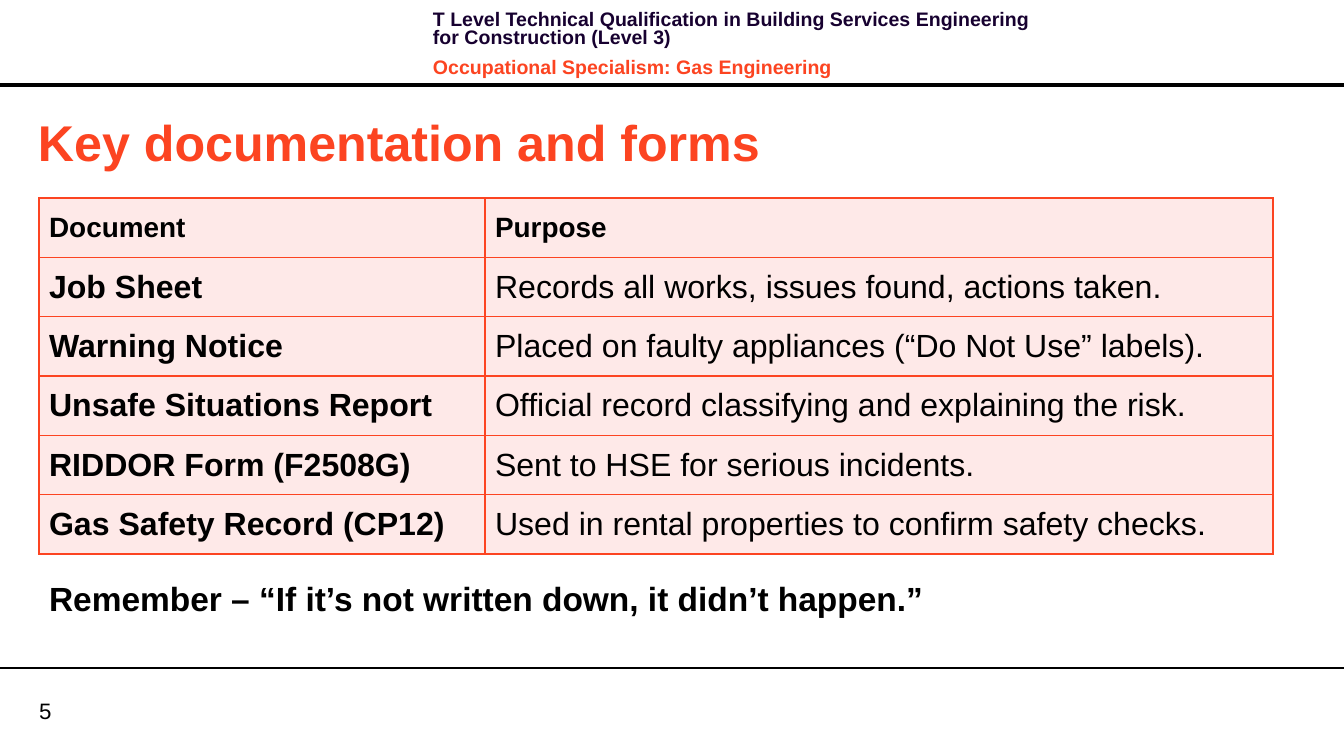
"""Build the slide on key documentation and forms for gas engineering."""
from dataclasses import dataclass

from lxml.etree import SubElement
from pptx import Presentation
from pptx.dml.color import RGBColor
from pptx.enum.shapes import MSO_CONNECTOR, MSO_SHAPE
from pptx.enum.text import MSO_ANCHOR
from pptx.oxml.ns import qn
from pptx.slide import Slide
from pptx.table import _Cell
from pptx.text.text import _Paragraph
from pptx.util import Emu, Pt

EMU_PER_PX = 9108
SLIDE_WIDTH, SLIDE_HEIGHT = 1344, 751
BLACK, NAVY, ORANGE, BLUSH = "000000", "170130", "FC4421", "FEE9E8"
TABLE_LEFT, TABLE_TOP, TABLE_HEIGHT = 39, 198, 356
COLUMN_WIDTHS = (446, 788)


@dataclass(frozen=True)
class Line:
    text: str
    size: int
    color: str = BLACK
    bold: bool = True


@dataclass(frozen=True)
class TextBlock:
    left: int
    top: int
    width: int
    height: int
    lines: tuple[Line, ...]
    anchor: MSO_ANCHOR = MSO_ANCHOR.TOP
    margin_x: int = 10
    margin_y: int = 5
    line_points: float | None = None
    gap_points: int = 0


@dataclass(frozen=True)
class Document:
    name: str
    purpose: str


TEXT_BLOCKS = (
    TextBlock(39, 697, 64, 27, (Line("5", 16, bold=False),), MSO_ANCHOR.MIDDLE, 0, 0),
    TextBlock(
        423, 7, 640, 64,
        (
            Line("T Level Technical Qualification in Building Services Engineering "
                 "for Construction (Level 3)", 14, NAVY),
            Line("Occupational Specialism: Gas Engineering", 14, ORANGE),
        ),
        line_points=13.1, gap_points=4,
    ),
    TextBlock(28, 106, 1152, 71, (Line("Key documentation and forms", 36, ORANGE),),
              MSO_ANCHOR.MIDDLE),
    TextBlock(39, 573, 1179, 50,
              (Line("Remember – “If it’s not written down, it didn’t happen.”", 24),)),
)

DOCUMENTS = (
    Document("Document", "Purpose"),
    Document("Job Sheet", "Records all works, issues found, actions taken."),
    Document("Warning Notice", "Placed on faulty appliances (“Do Not Use” labels)."),
    Document("Unsafe Situations Report", "Official record classifying and explaining the risk."),
    Document("RIDDOR Form (F2508G)", "Sent to HSE for serious incidents."),
    Document("Gas Safety Record (CP12)", "Used in rental properties to confirm safety checks."),
)


def px(length: int) -> Emu:
    """Turn a length in px into EMU."""
    return Emu(length * EMU_PER_PX)


def rgb(color: str) -> RGBColor:
    """Turn a hex string into a colour."""
    return RGBColor.from_string(color)


def add_line_run(paragraph: _Paragraph, line: Line) -> None:
    """Add one styled run to a paragraph."""
    run = paragraph.add_run()
    run.text = line.text
    run.font.name = "Arial"
    run.font.size = Pt(line.size)
    run.font.bold = line.bold
    run.font.color.rgb = rgb(line.color)


def add_text_block(slide: Slide, block: TextBlock) -> None:
    """Add a wrapped text box with one paragraph for each line."""
    shape = slide.shapes.add_textbox(
        px(block.left), px(block.top), px(block.width), px(block.height))
    frame = shape.text_frame
    frame.word_wrap = True
    frame.vertical_anchor = block.anchor
    frame.margin_left = frame.margin_right = px(block.margin_x)
    frame.margin_top = frame.margin_bottom = px(block.margin_y)
    for index, line in enumerate(block.lines):
        paragraph = frame.add_paragraph() if index else frame.paragraphs[0]
        paragraph.space_before = Pt(block.gap_points if index else 0)
        paragraph.space_after = Pt(block.gap_points)
        if block.line_points:
            paragraph.line_spacing = Pt(block.line_points)
        add_line_run(paragraph, line)


def add_rules(slide: Slide) -> None:
    """Add the thick bar under the header and the thin line over the footer."""
    bar = slide.shapes.add_shape(
        MSO_SHAPE.RECTANGLE, px(0), px(83), px(SLIDE_WIDTH), px(4))
    bar.shadow.inherit = False
    bar.fill.solid()
    bar.fill.fore_color.rgb = rgb(BLACK)
    bar.line.fill.background()
    footer_line = slide.shapes.add_connector(
        MSO_CONNECTOR.STRAIGHT, px(0), px(668), px(SLIDE_WIDTH), px(668))
    footer_line.line.color.rgb = rgb(BLACK)
    footer_line.line.width = Pt(0.75)
    SubElement(footer_line._element.spPr, qn("a:effectLst"))


def style_cell(cell: _Cell, line: Line) -> None:
    """Give a cell its borders, fill and text."""
    properties = cell._tc.get_or_add_tcPr()
    for side in ("a:lnL", "a:lnR", "a:lnT", "a:lnB"):
        border = SubElement(properties, qn(side), w=str(Pt(1)))
        fill = SubElement(border, qn("a:solidFill"))
        SubElement(fill, qn("a:srgbClr"), val=ORANGE)
    cell.fill.solid()
    cell.fill.fore_color.rgb = rgb(BLUSH)
    cell.vertical_anchor = MSO_ANCHOR.MIDDLE
    add_line_run(cell.text_frame.paragraphs[0], line)


def add_document_table(slide: Slide) -> None:
    """Add the table of documents and their purposes."""
    table = slide.shapes.add_table(
        len(DOCUMENTS), len(COLUMN_WIDTHS), px(TABLE_LEFT), px(TABLE_TOP),
        px(sum(COLUMN_WIDTHS)), px(TABLE_HEIGHT)).table
    table.first_row = table.horz_banding = False
    for column, width in zip(table.columns, COLUMN_WIDTHS):
        column.width = px(width)
    for index, document in enumerate(DOCUMENTS):
        is_header = index == 0
        size = 20 if is_header else 23
        style_cell(table.cell(index, 0), Line(document.name, size))
        style_cell(table.cell(index, 1), Line(document.purpose, size, bold=is_header))


def main() -> None:
    """Build and save the presentation."""
    presentation = Presentation()
    presentation.slide_width = px(SLIDE_WIDTH)
    presentation.slide_height = px(SLIDE_HEIGHT)
    slide = presentation.slides.add_slide(presentation.slide_layouts[6])
    add_rules(slide)
    for block in TEXT_BLOCKS:
        add_text_block(slide, block)
    add_document_table(slide)
    presentation.save("out.pptx")


if __name__ == "__main__":
    main()
